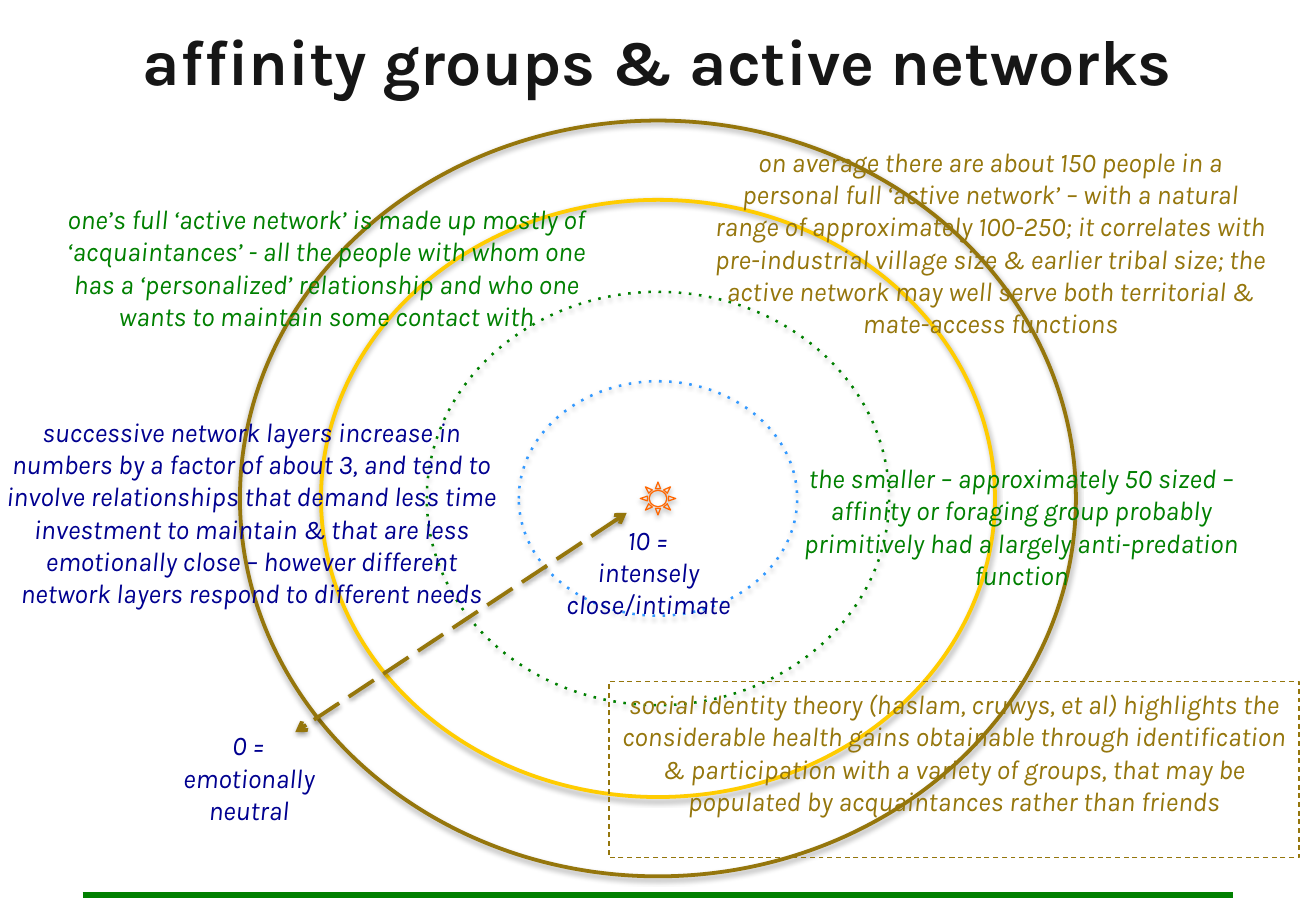
import pptx
import pptx.util
import pptx.dml.color
import pptx.enum.shapes
import pptx.enum.text
import pptx.oxml
import pptx.oxml.ns
from lxml import etree

Pt = pptx.util.Pt
RGB = pptx.dml.color.RGBColor
Shape = pptx.enum.shapes.MSO_SHAPE
Anchor = pptx.enum.text.MSO_ANCHOR
qn = pptx.oxml.ns.qn

INK = RGB(0x16, 0x16, 0x16)
BROWN = RGB(0x95, 0x76, 0x0C)
GOLD = RGB(0xFF, 0xCC, 0x00)
GREEN = RGB(0x00, 0x80, 0x00)
BLUE = RGB(0x33, 0x99, 0xFF)
NAVY = RGB(0x00, 0x00, 0x90)
ORANGE = RGB(0xFF, 0x66, 0x00)

CENTER = (390, 295.5)


class Deck:
    """Holds the text style and the current slide."""

    def __init__(self, wide, high):
        self.prs = pptx.Presentation()
        self.prs.slide_width, self.prs.slide_height = Pt(wide), Pt(high)
        self.slide = self.prs.slides.add_slide(self.prs.slide_layouts[6])
        self.style = {"name": "Karla", "size": Pt(16), "italic": True, "bold": False}

    def stroke(self, item, color, width, dash=None, heads=False):
        item.line.color.rgb = color
        item.line.width = Pt(width)
        ln = item.element.spPr.find(qn("a:ln"))
        if dash:
            etree.SubElement(ln, qn("a:prstDash"), val=dash)
        if heads:
            for end in ("a:headEnd", "a:tailEnd"):
                etree.SubElement(ln, qn(end), type="arrow")

    def shade(self, item, alpha=None, dist=0):
        """Give a soft shadow below, or none when alpha is missing."""
        props = item.element.spPr
        for old in props.findall(qn("a:effectLst")):
            props.remove(old)
        effect = etree.SubElement(props, qn("a:effectLst"))
        if alpha:
            outer = etree.SubElement(effect, qn("a:outerShdw"), blurRad=str(Pt(3.1)),
                                     dist=str(Pt(dist)), dir="5400000", rotWithShape="0")
            tint = etree.SubElement(outer, qn("a:srgbClr"), val="000000")
            etree.SubElement(tint, qn("a:alpha"), val=str(alpha * 1000))

    def rings(self, specs):
        """Group shapes that share one centre."""
        group = self.slide.shapes.add_group_shape()
        for kind, wide, high, color, width, dash in specs:
            ring = group.shapes.add_shape(
                kind, Pt(CENTER[0] - wide / 2), Pt(CENTER[1] - high / 2), Pt(wide), Pt(high))
            ring.fill.background()
            self.stroke(ring, color, width, dash)
            self.shade(ring, 35, 1.8)

    def line(self, start, end, color, width, dash=None, heads=False, shadow=()):
        rule = self.slide.shapes.add_connector(
            pptx.enum.shapes.MSO_CONNECTOR.STRAIGHT, *map(Pt, start + end))
        self.stroke(rule, color, width, dash, heads)
        self.shade(rule, *shadow)

    def label(self, item, lines, color, anchor=Anchor.TOP, **extra):
        frame = item.text_frame
        frame.word_wrap = True
        frame.vertical_anchor = anchor
        frame.text = "\n".join(lines)
        for para in frame.paragraphs:
            para.alignment = pptx.enum.text.PP_ALIGN.CENTER
            font = para.runs[0].font
            for key, value in {**self.style, **extra}.items():
                setattr(font, key, value)
            font.color.rgb = color

    def text(self, box, color, *lines, **extra):
        self.label(self.slide.shapes.add_textbox(*map(Pt, box)), lines, color, **extra)

    def frame(self, box, color, *lines):
        item = self.slide.shapes.add_shape(Shape.RECTANGLE, *map(Pt, box))
        item.fill.background()
        self.stroke(item, color, 0.75, "dash")
        item.shadow.inherit = False
        self.label(item, lines, color)


def main():
    deck = Deck(780, 540)

    # Title
    deck.text((0, 15, 780, 47), INK, "affinity groups & active networks",
              anchor=Anchor.BOTTOM, size=Pt(38), bold=True, italic=False)

    # Network layers around one person
    deck.rings([
        (Shape.OVAL, 495.5, 448, BROWN, 2.25, None),
        (Shape.OVAL, 165, 139, BLUE, 1.5, "dot"),
        (Shape.SUN, 21, 19.5, ORANGE, 0.75, None),
        (Shape.OVAL, 274, 245, GREEN, 1.5, "dot"),
        (Shape.OVAL, 399.5, 354, GOLD, 2.25, None),
    ])

    # Footer rule
    deck.line((49, 530.5), (731, 530.5), GREEN, 3.25)

    # Notes on the outer network
    deck.text((21.5, 116.5, 344, 104), GREEN,
              "one’s full ‘active network’ is made up mostly of ‘acquaintances’ - all the "
              "people with whom one has a ‘personalized’ relationship and who one wants to "
              "maintain some contact with")
    deck.text((415, 82.5, 344, 143), BROWN,
              "on average there are about 150 people in a personal full ‘active network’ – "
              "with a natural range of approximately 100-250; it correlates with "
              "pre-industrial village size & earlier tribal size; the active network may "
              "well serve both territorial & mate-access functions")
    deck.frame((361, 404, 409, 104.5), BROWN,
               "social identity theory (haslam, cruwys, et al) highlights the considerable "
               "health gains obtainable through identification & participation with a "
               "variety of groups, that may be populated by acquaintances rather than friends")

    # Closeness scale
    deck.line((371.5, 304), (175, 434), BROWN, 2.25, "lgDash", True, (38, 1.6))
    deck.text((83, 428.5, 129, 65.5), NAVY, "0 =", "emotionally neutral")
    deck.text((310.5, 306.5, 147.5, 65.5), NAVY, "10 =", "intensely close/intimate")

    # Notes on the inner layers
    deck.text((-7, 242.5, 312, 143), NAVY,
              "successive network layers increase in numbers by a factor of about 3, and "
              "tend to involve relationships that demand less time investment to maintain "
              "& that are less emotionally close – however different network layers "
              "respond to different needs")
    deck.text((458, 270, 294.5, 85), GREEN,
              "the smaller – approximately 50 sized – affinity or foraging group probably "
              "primitively had a largely anti-predation function")

    deck.prs.save("out.pptx")


if __name__ == "__main__":
    main()
